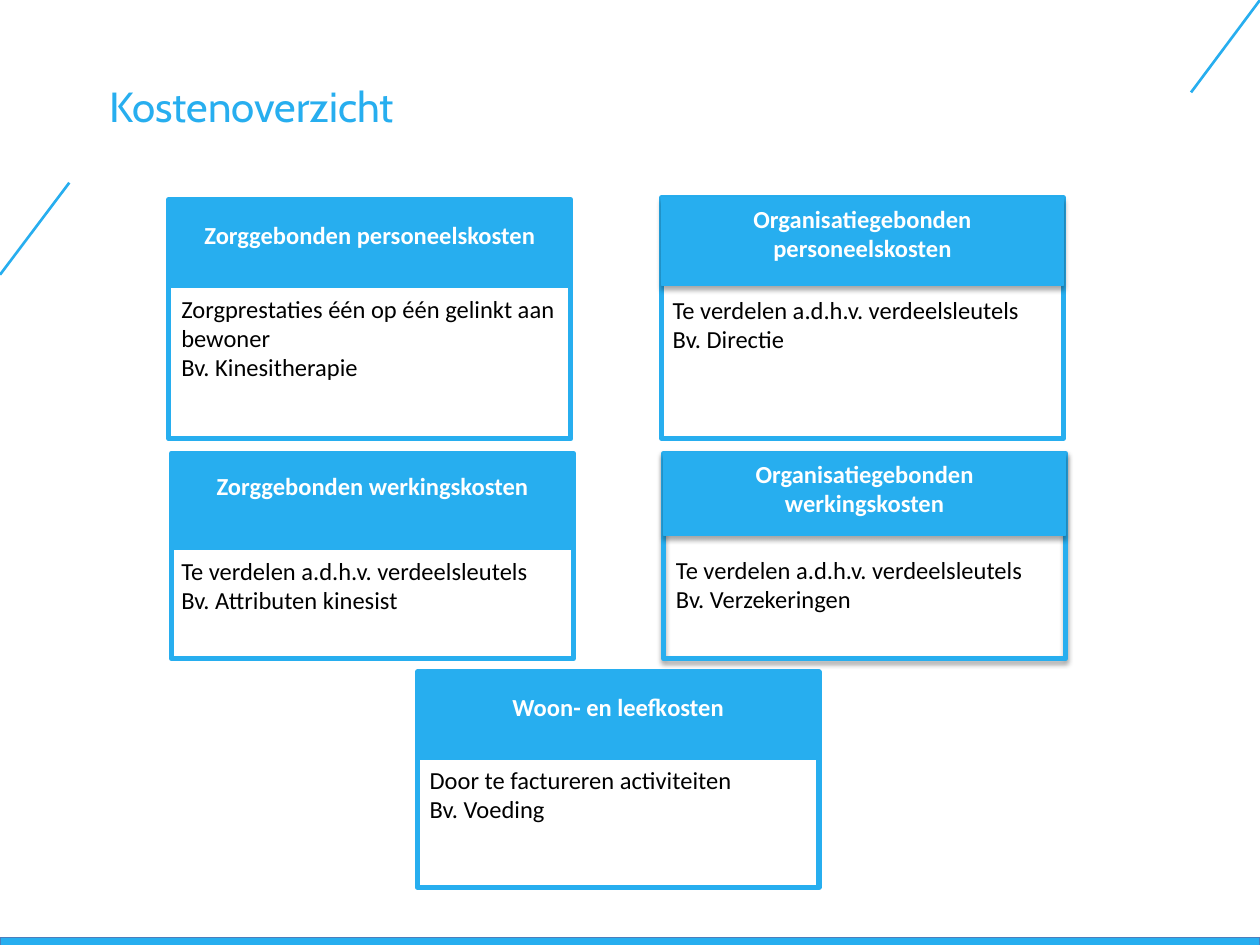
from lxml import etree
from pptx import Presentation
from pptx.dml.color import RGBColor
from pptx.enum import shapes, text
from pptx.oxml.ns import qn
from pptx.util import Pt

COLORS = {"blue": "27AEEF", "edge": "4B7EBC", "white": "FFFFFF", "black": "000000"}
TITLE = "Kostenoverzicht"
CARD_WIDTH = 229.7
ONE_LINE, TWO_LINES, THREE_LINES = 24.2, 41.2, 58.2

# Each card: frame (left, top, height), band height, heading (top, height),
# text (left, top, height), parts with a shadow
CARDS = [
    dict(heading="Zorggebonden personeelskosten",
         lines=["Zorgprestaties één op één gelinkt aan bewoner", "Bv. Kinesitherapie"],
         frame=(96.5, 114, 136.8), band=50, label=(122.4, ONE_LINE),
         body=(96.5, 164.2, THREE_LINES), shadows=()),
    dict(heading="Organisatiegebonden personeelskosten",
         lines=["Te verdelen a.d.h.v. verdeelsleutels", "Bv. Directie"],
         frame=(378, 113, 137.5), band=50, label=(113, TWO_LINES),
         body=(377.3, 165, TWO_LINES), shadows=("band",)),
    dict(heading="Organisatiegebonden werkingskosten",
         lines=["Te verdelen a.d.h.v. verdeelsleutels", "Bv. Verzekeringen"],
         frame=(379.2, 259, 117.4), band=46.8, label=(258.5, TWO_LINES),
         body=(379.2, 313.4, TWO_LINES), shadows=("frame", "band")),
    dict(heading="Zorggebonden werkingskosten",
         lines=["Te verdelen a.d.h.v. verdeelsleutels", "Bv. Attributen kinesist"],
         frame=(98, 259, 117.4), band=54.7, label=(265.7, ONE_LINE),
         body=(96.5, 314, TWO_LINES), shadows=()),
    dict(heading="Woon- en leefkosten",
         lines=["Door te factureren activiteiten", "Bv. Voeding"],
         frame=(238.4, 384, 123), band=50, label=(391.7, ONE_LINE),
         body=(238.4, 433.5, TWO_LINES), shadows=()),
]
DIAGONALS = [(39.6, 104.4, 0, 157), (720, 0, 680.6, 52.8)]


def color(name):
    return RGBColor.from_string(COLORS[name])


def add_shadow(shape):
    effects = etree.SubElement(shape._element.spPr, qn("a:effectLst"))
    outer = etree.SubElement(effects, qn("a:outerShdw"), blurRad=str(Pt(3.1)),
                             dist=str(Pt(1.8)), dir="5400000", rotWithShape="0")
    shade = etree.SubElement(outer, qn("a:srgbClr"), val=COLORS["black"])
    etree.SubElement(shade, qn("a:alpha"), val="35000")


def add_box(left, top, width, height, filled=True, line="blue", weight=0.75, shadow=False):
    box = page.shapes.add_shape(shapes.MSO_SHAPE.RECTANGLE,
                                Pt(left), Pt(top), Pt(width), Pt(height))
    if filled:
        box.fill.solid()
        box.fill.fore_color.rgb = color("blue")
    else:
        box.fill.background()
    box.line.color.rgb = color(line)
    box.line.width = Pt(weight)
    if shadow:
        add_shadow(box)
    else:
        box.shadow.inherit = False
    return box


def write(shape, wording, ink, size=14, font="Calibri", bold=False, align=text.PP_ALIGN.LEFT):
    frame = shape.text_frame
    frame.text = wording
    frame.word_wrap = True
    frame.vertical_anchor = text.MSO_ANCHOR.TOP
    frame.auto_size = text.MSO_AUTO_SIZE.NONE
    for para in frame.paragraphs:
        para.alignment = align
        for span in para.runs:
            span.font.name = font
            span.font.size = Pt(size)
            span.font.bold = bold
            span.font.color.rgb = color(ink)


def add_card(card):
    left, top, height = card["frame"]
    add_box(left, top, CARD_WIDTH, height, filled=False, weight=3,
            shadow="frame" in card["shadows"])
    add_box(left, top, CARD_WIDTH, card["band"], shadow="band" in card["shadows"])
    label_top, label_height = card["label"]
    label = add_box(left, label_top, CARD_WIDTH, label_height)
    write(label, card["heading"], "white", bold=True, align=text.PP_ALIGN.CENTER)
    body_left, body_top, body_height = card["body"]
    body = page.shapes.add_textbox(Pt(body_left), Pt(body_top), Pt(CARD_WIDTH), Pt(body_height))
    write(body, "\n".join(card["lines"]), "black")


deck = Presentation()
deck.slide_width, deck.slide_height = Pt(720), Pt(540)
page = deck.slides.add_slide(deck.slide_layouts[5])

# Footer bar and corner diagonals
add_box(0, 535.7, 720, 5, line="edge")
for x1, y1, x2, y2 in DIAGONALS:
    diagonal = page.shapes.add_connector(shapes.MSO_CONNECTOR.STRAIGHT,
                                         Pt(x1), Pt(y1), Pt(x2), Pt(y2))
    diagonal.line.color.rgb = color("blue")
    diagonal.line.width = Pt(1.5)
    etree.SubElement(diagonal._element.spPr, qn("a:effectLst"))

# Title
title = page.shapes.title
title.left, title.top, title.width, title.height = Pt(55.4), Pt(42.5), Pt(596), Pt(45.4)
write(title, TITLE, "blue", size=24, font="Cabin")

# Cost cards
for card in CARDS:
    add_card(card)

deck.save("out.pptx")
